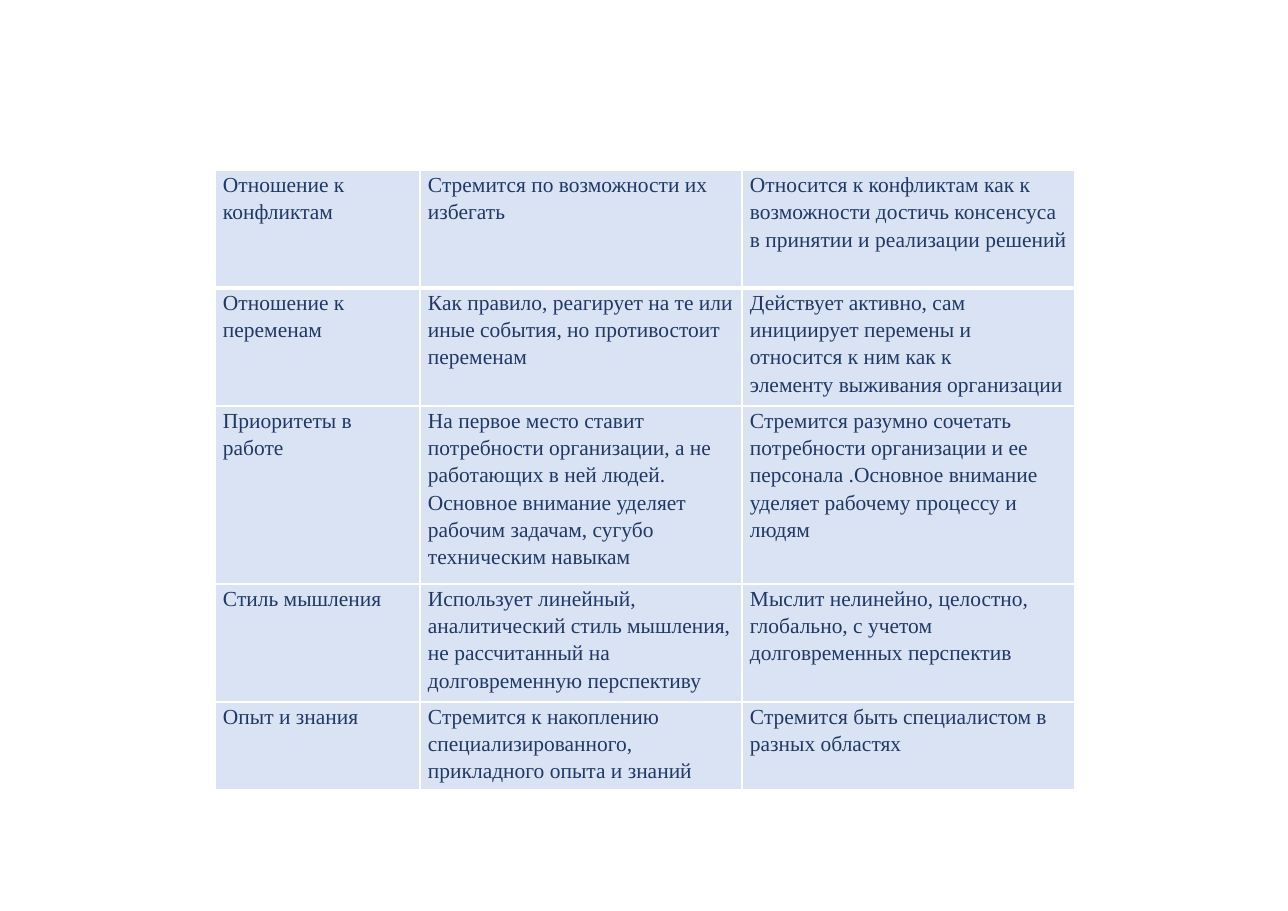
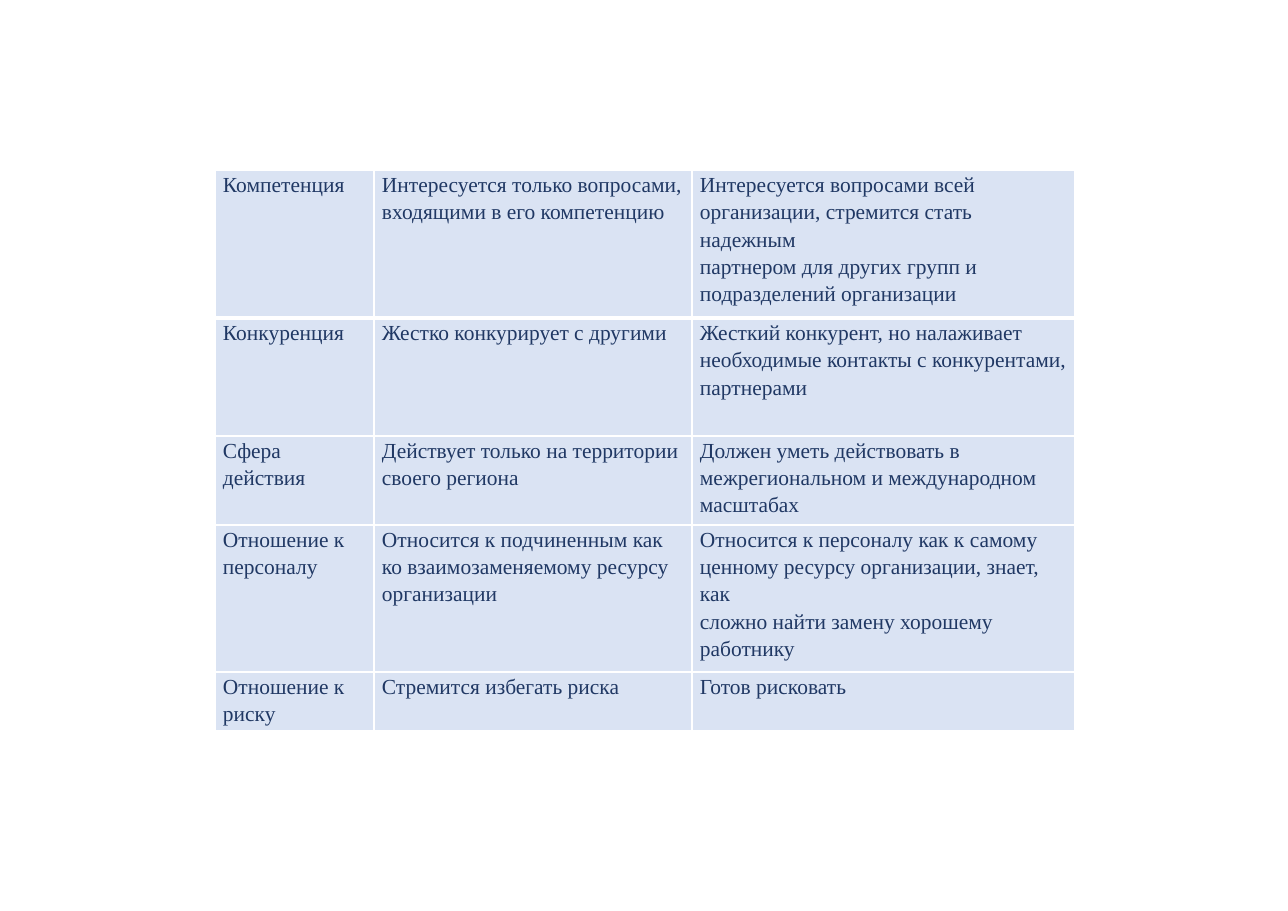
"""Build two slides of tables comparing two styles of management."""
from lxml.etree import SubElement
from pptx import Presentation
from pptx.dml.color import RGBColor
from pptx.oxml.ns import qn
from pptx.util import Pt

PX = 8298
COLORS = {"text": "203864", "cell": "DAE3F3", "border": "FFFFFF"}
LEFT, TOP, INSET = 215, 170, 8


def write(frame, text, *, font="Times New Roman", size=14, color="text", spacing=1.15):
    frame.text = text
    for paragraph in frame.paragraphs:
        paragraph.line_spacing = spacing
        paragraph.font.name = font
        paragraph.font.size = Pt(size)
        paragraph.font.color.rgb = RGBColor.from_string(COLORS[color])


def add_borders(cell, **widths):
    properties = cell._tc.get_or_add_tcPr()
    for side, width in widths.items():
        line = SubElement(properties, qn(f"a:ln{side}"), w=str(Pt(width)))
        fill = SubElement(line, qn("a:solidFill"))
        SubElement(fill, qn("a:srgbClr"), val=COLORS["border"])


comparisons = [
    {
        "columns": [205, 322, 333],
        "heights": [118, 118, 178, 118, 88],
        "rows": [
            ("Отношение к конфликтам",
             "Стремится по возможности их избегать",
             "Относится к конфликтам как к возможности достичь консенсуса "
             "в принятии и реализации решений"),
            ("Отношение к переменам",
             "Как правило, реагирует на те или иные события, но противостоит переменам",
             "Действует активно, сам инициирует перемены и относится к ним как к\n"
             "элементу выживания организации"),
            ("Приоритеты в работе",
             "На первое место ставит потребности организации, а не работающих в ней людей. "
             "Основное внимание уделяет рабочим задачам, сугубо техническим навыкам",
             "Стремится разумно сочетать потребности организации и ее персонала "
             ".Основное внимание уделяет рабочему процессу и людям"),
            ("Стиль мышления",
             "Использует линейный, аналитический стиль мышления, "
             "не рассчитанный на долговременную перспективу",
             "Мыслит нелинейно, целостно, глобально, с учетом долговременных перспектив"),
            ("Опыт и знания",
             "Стремится к накоплению специализированного, прикладного опыта и знаний",
             "Стремится быть специалистом в разных областях"),
        ],
    },
    {
        "columns": [159, 318, 383],
        "heights": [148, 118, 89, 147, 59],
        "rows": [
            ("Компетенция",
             "Интересуется только вопросами, входящими в его компетенцию",
             "Интересуется вопросами всей организации, стремится стать надежным\n"
             "партнером для других групп и подразделений организации"),
            ("Конкуренция",
             "Жестко конкурирует с другими",
             "Жесткий конкурент, но налаживает необходимые контакты с конкурентами,\n"
             "партнерами"),
            ("Сфера действия",
             "Действует только на территории своего региона",
             "Должен уметь действовать в межрегиональном и международном\n"
             "масштабах"),
            ("Отношение к персоналу",
             "Относится к подчиненным как ко взаимозаменяемому ресурсу организации",
             "Относится к персоналу как к самому ценному ресурсу организации, знает, как\n"
             "сложно найти замену хорошему работнику"),
            ("Отношение к риску",
             "Стремится избегать риска",
             "Готов рисковать"),
        ],
    },
]

deck = Presentation()
deck.slide_width, deck.slide_height = 1288 * PX, 911 * PX

for comparison in comparisons:
    columns, heights, rows = comparison["columns"], comparison["heights"], comparison["rows"]
    slide = deck.slides.add_slide(deck.slide_layouts[6])
    table = slide.shapes.add_table(
        len(rows), len(columns), LEFT * PX, TOP * PX, sum(columns) * PX, sum(heights) * PX
    ).table
    table.first_row = table.horz_banding = False
    for column, width in zip(table.columns, columns):
        column.width = width * PX
    for index, (row, height, texts) in enumerate(zip(table.rows, heights, rows)):
        row.height = height * PX
        for cell, text in zip(row.cells, texts):
            cell.margin_left = cell.margin_right = INSET * PX
            cell.margin_top = cell.margin_bottom = 0
            add_borders(cell, L=1, R=1, T=3 if index == 1 else 1, B=3 if index == 0 else 1)
            cell.fill.solid()
            cell.fill.fore_color.rgb = RGBColor.from_string(COLORS["cell"])
            write(cell.text_frame, text)

deck.save("out.pptx")
